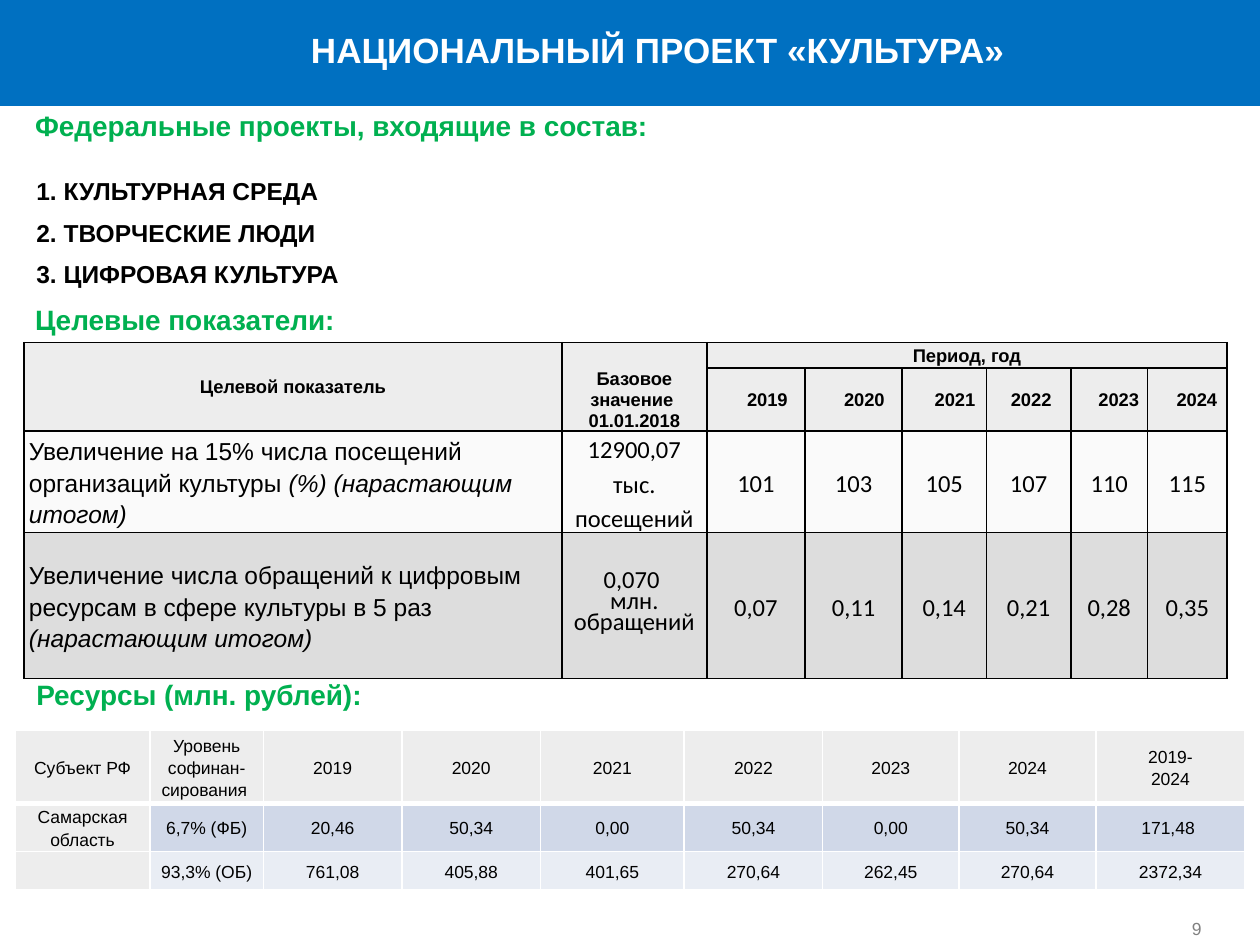
from itertools import product

from lxml import etree
from pptx import Presentation, util as u
from pptx.dml.color import RGBColor
from pptx.enum import shapes, text
from pptx.oxml.ns import qn

WIDTH, HEIGHT = u.Inches(10), u.Inches(7.5)
BLACK, WHITE, GREEN, BLUE, GREY = "000000", "FFFFFF", "00B050", "0070C1", "808080"
CENTER, LEFT = text.PP_ALIGN.CENTER, text.PP_ALIGN.LEFT
TOP, MIDDLE, BOTTOM = text.MSO_ANCHOR.TOP, text.MSO_ANCHOR.MIDDLE, text.MSO_ANCHOR.BOTTOM
YEARS = ["2019", "2020", "2021", "2022", "2023", "2024"]


def color(value):
    """Turn a hex string into a colour."""
    return RGBColor.from_string(value)


def place(left, top, width, height):
    """Turn percentages of the slide into lengths."""
    return [round(share * side / 100) for share, side in
            zip((left, top, width, height), (WIDTH, HEIGHT, WIDTH, HEIGHT))]


def write(frame, content, align=LEFT, spacing=None, indent=0, italic_tail="", **style):
    """Fill a frame with one paragraph per line and an optional italic tail."""
    for index, line in enumerate(content.split("\n")):
        para = frame.add_paragraph() if index else frame.paragraphs[0]
        para.alignment = align
        if spacing:
            para.line_spacing = spacing
        if indent:
            properties = para._p.get_or_add_pPr()
            properties.set("marL", str(u.Inches(indent)))
            properties.set("indent", "0")
        add_span(para, line, **style)
    if italic_tail:
        add_span(para, italic_tail, italic=True, **style)


def add_span(para, content, size=10, font="Arial", tint=BLACK, bold=False, italic=False):
    """Add one formatted run."""
    span = para.add_run()
    span.text = content
    span.font.size, span.font.name = u.Pt(size), font
    span.font.bold, span.font.italic = bold, italic
    span.font.color.rgb = color(tint)


def add_label(page, box, content, wrap=True, anchor=TOP, inset=0.1, **style):
    """Add a text box that fits its text."""
    frame = page.shapes.add_textbox(*place(*box)).text_frame
    frame.word_wrap, frame.vertical_anchor = wrap, anchor
    frame.auto_size = text.MSO_AUTO_SIZE.SHAPE_TO_FIT_TEXT
    frame.margin_left = frame.margin_right = u.Inches(inset)
    write(frame, content, **style)


def add_grid(page, box, columns, rows):
    """Add an unstyled table whose columns and rows share the box by weight."""
    left, top, width, height = place(*box)
    table = page.shapes.add_table(len(rows), len(columns), left, top, width, height).table
    table.first_row = table.horz_banding = False
    for column, weight in zip(table.columns, columns):
        column.width = round(width * weight / sum(columns))
    for row, weight in zip(table.rows, rows):
        row.height = round(height * weight / sum(rows))
    return table


def dress(cell, fill, line, alpha=100, bottom=1):
    """Give a cell its borders and fill."""
    properties = cell._tc.get_or_add_tcPr()
    for side, points in zip("LRTB", (1, 1, 1, bottom)):
        border = etree.SubElement(properties, qn(f"a:ln{side}"), w=str(u.Pt(points)))
        solid = etree.SubElement(border, qn("a:solidFill"))
        etree.SubElement(solid, qn("a:srgbClr"), val=line)
    cell.fill.solid()
    cell.fill.fore_color.rgb = color(fill)
    if alpha < 100:
        tone = next(properties.find(qn("a:solidFill")).iter(qn("a:srgbClr")))
        etree.SubElement(tone, qn("a:alpha"), val=str(alpha * 1000))


def set_cell(cell, content, anchor=MIDDLE, inset=0.01, align=CENTER, spacing=1.15, **style):
    """Write a cell with side insets only."""
    cell.vertical_anchor = anchor
    cell.margin_left = cell.margin_right = u.Inches(inset)
    cell.margin_top = cell.margin_bottom = 0
    write(cell.text_frame, content, align=align, spacing=spacing, **style)


def add_header(page, box):
    """Draw the title band."""
    left, top, width, height = box
    band = page.shapes.add_shape(shapes.MSO_SHAPE.RECTANGLE, *place(*box))
    band.shadow.inherit = False
    band.fill.solid()
    band.fill.fore_color.rgb = color(BLUE)
    band.line.fill.background()
    title = (left + width * 0.237, top + height * 0.21, width * 0.57, height * 0.52)
    add_label(page, title, "НАЦИОНАЛЬНЫЙ ПРОЕКТ «КУЛЬТУРА»", wrap=False, inset=0.05,
              align=CENTER, size=20, tint=WHITE, bold=True)


def add_projects(page, box, names):
    """List the federal projects at equal steps."""
    left, top, width, height = box
    step = height / len(names)
    for index, name in enumerate(names):
        add_label(page, (left, top + index * step, width, step),
                  f"{index + 1}. {name}", size=14, bold=True)


def add_targets(page, box):
    """Draw the table of target indicators."""
    table = add_grid(page, box, [4.27, 1.15, 0.78, 0.77, 0.67, 0.67, 0.61, 0.63],
                     [0.18, 0.27, 0.76, 1.16])
    fills = [("EDEDED", 100), ("EDEDED", 100), ("F2F2F2", 36), ("BFBFBF", 52)]
    for (row, (fill, alpha)), column in product(enumerate(fills), range(8)):
        dress(table.cell(row, column), fill, BLACK, alpha)
    for start, end in (((0, 0), (1, 0)), ((0, 1), (1, 1)), ((0, 2), (0, 7))):
        table.cell(*start).merge(table.cell(*end))

    head = dict(size=10.5, bold=True)
    set_cell(table.cell(0, 0), "Целевой показатель", spacing=u.Pt(12), **head)
    set_cell(table.cell(0, 1), "Базовое значение \n01.01.2018", anchor=BOTTOM,
             spacing=u.Pt(12), **head)
    set_cell(table.cell(0, 2), "Период, год", anchor=TOP, **head)
    indents = [0.18, 0.17, 0.17, 0.04, 0.15, 0.15]
    for column, (year, indent) in enumerate(zip(YEARS, indents), 2):
        set_cell(table.cell(1, column), year, spacing=u.Pt(12), indent=indent, **head)

    targets = [
        ("Увеличение на 15% числа посещений организаций культуры ",
         "(%) (нарастающим итогом)", "12900,07\nтыс. посещений", 1.15,
         ["101", "103", "105", "107", "110", "115"]),
        ("Увеличение числа обращений к цифровым ресурсам в сфере культуры в 5 раз ",
         "(нарастающим итогом)", "0,070 \nмлн. обращений", u.Pt(12),
         ["0,07", "0,11", "0,14", "0,21", "0,28", "0,35"]),
    ]
    for row, (name, note, base, spacing, values) in enumerate(targets, 2):
        set_cell(table.cell(row, 0), name, align=LEFT, indent=0.03, size=14, italic_tail=note)
        set_cell(table.cell(row, 1), base, inset=0, spacing=spacing, size=14, font="Calibri")
        for column, value in enumerate(values, 2):
            set_cell(table.cell(row, column), value, inset=0.03, size=14, font="Calibri")


def add_resources(page, box):
    """Draw the table of funding by year."""
    records = [
        ["Субъект РФ", "Уровень софинан-сирования ", *YEARS, "2019-\n2024"],
        ["Самарская область", "6,7% (ФБ)", "20,46", "50,34", "0,00", "50,34", "0,00",
         "50,34", "171,48 "],
        ["", "93,3% (ОБ)", "761,08", "405,88", "401,65", "270,64", "262,45",
         "270,64", "2372,34"],
    ]
    table = add_grid(page, box, [1.07, 0.9, 1.1, 1.1, 1.14, 1.1, 1.08, 1.09, 1.18],
                     [0.43, 0.33, 0.29])
    bands = [None, "D0D8E8", "E9EDF4"]
    for row, record in enumerate(records):
        for column, value in enumerate(record):
            cell = table.cell(row, column)
            if row and column:
                dress(cell, bands[row], WHITE)
            else:
                dress(cell, "DCDCDC", WHITE, alpha=50, bottom=1 if row else 3)
            set_cell(cell, value, inset=0.07)


def main():
    """Build and save the deck."""
    deck = Presentation()
    deck.slide_width, deck.slide_height = WIDTH, HEIGHT
    page = deck.slides.add_slide(deck.slide_layouts[6])
    heading = dict(size=16, tint=GREEN, bold=True)
    add_header(page, (0, 0, 100, 11.2))
    add_label(page, (1.8, 10.8, 56.1, 4.93), "Федеральные проекты, входящие в состав:", **heading)
    add_projects(page, (1.9, 18, 54.2, 13.2),
                 ["КУЛЬТУРНАЯ СРЕДА", "ТВОРЧЕСКИЕ ЛЮДИ", "ЦИФРОВАЯ КУЛЬТУРА"])
    add_label(page, (1.8, 31.33, 34.7, 4.93), "Целевые показатели:", **heading)
    add_targets(page, (1.9, 36.27, 95.5, 31.6))
    add_label(page, (1.9, 71.07, 30.4, 4.93), "Ресурсы (млн. рублей):", wrap=False, **heading)
    add_resources(page, (1.2, 77.33, 97.6, 14))
    add_label(page, (94.1, 94.67, 5.6, 5.33), "9", wrap=False, anchor=BOTTOM, inset=0.05,
              size=10, tint=GREY)
    deck.save("out.pptx")


if __name__ == "__main__":
    main()
